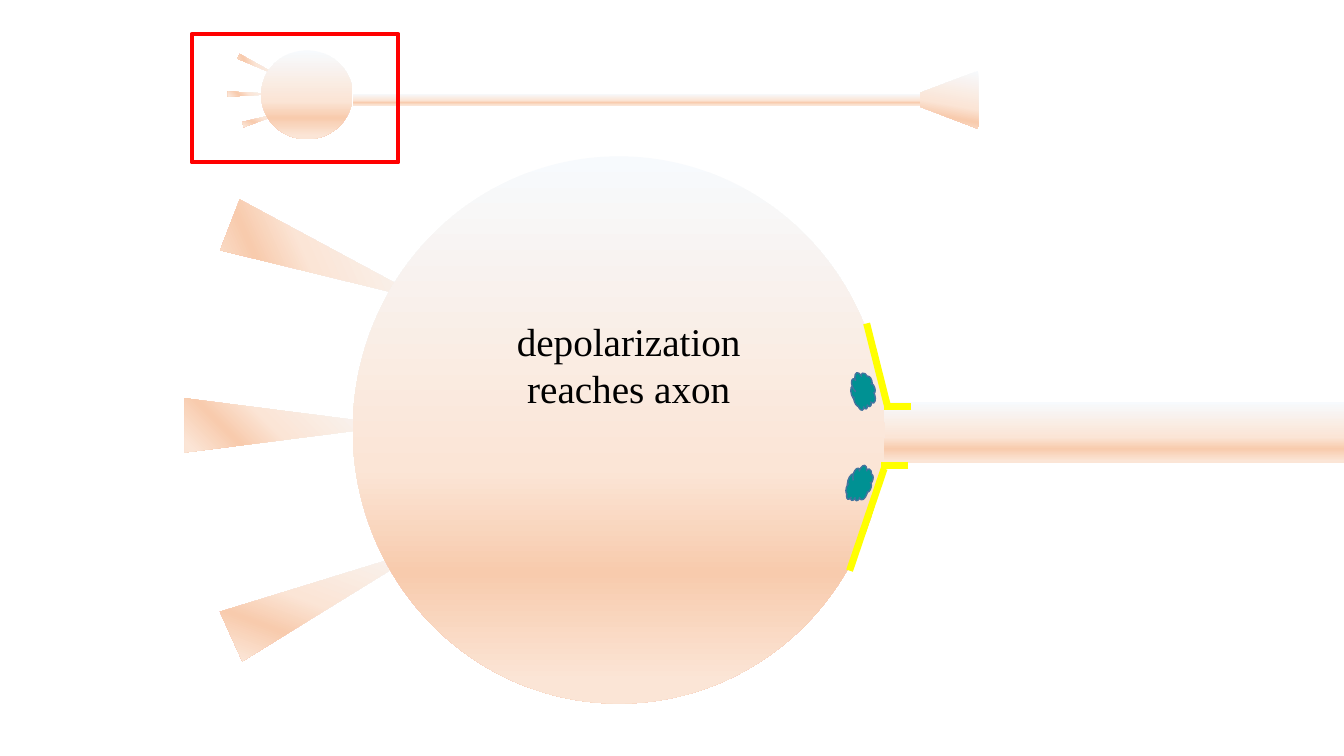
from copy import deepcopy
from typing import NamedTuple

from pptx import Presentation
from pptx.dml import color
from pptx.enum import shapes, text
from pptx.oxml import ns, xmlchemy
from pptx.shapes import autoshape
from pptx.slide import Slide
from pptx.util import Cm, Pt

BLACK = color.RGBColor(0x00, 0x00, 0x00)
RED = color.RGBColor(0xFF, 0x00, 0x00)
YELLOW = color.RGBColor(0xFF, 0xFF, 0x00)
TEAL = color.RGBColor(0x00, 0x91, 0x93)
BLUE = color.RGBColor(0x43, 0x73, 0x9E)
ICE = color.RGBColor(0xF7, 0xFA, 0xFD)
PEACH = color.RGBColor(0xFB, 0xE5, 0xD6)
APRICOT = color.RGBColor(0xF8, 0xCB, 0xAD)
MEMBRANE = [(0, ICE), (0.57, PEACH), (0.76, APRICOT), (0.96, PEACH)]
KIND = shapes.MSO_SHAPE


class Part(NamedTuple):
    kind: shapes.MSO_SHAPE
    left: float
    top: float
    width: float
    height: float
    rotation: float = 0
    gradient_angle: float = 90


class Segment(NamedTuple):
    start_x: float
    start_y: float
    end_x: float
    end_y: float


def dendrite(left: float, top: float, width: float, height: float, rotation: float) -> Part:
    return Part(KIND.ISOSCELES_TRIANGLE, left, top, width, height, rotation, 45)


TERMINAL = Part(KIND.TRAPEZOID, 23.19, 1.78, 1.47, 1.47, 270, 190)
NEURON_PARTS = [
    Part(KIND.RECTANGLE, 21.41, 10.13, 14.33, 1.55),
    dendrite(7.62, 3.94, 1.37, 5.38, 111),
    dendrite(6.65, 8.03, 1.37, 5.38, 90),
    dendrite(7.59, 12.24, 1.37, 5.38, 65.6),
    dendrite(6.5, 1.07, 0.13, 1.24, 116),
    dendrite(6.3, 1.75, 0.13, 1.24, 90),
    dendrite(6.65, 2.34, 0.13, 1.24, 73),
    Part(KIND.OVAL, 6.58, 1.27, 2.31, 2.24),
    Part(KIND.RECTANGLE, 8.89, 2.36, 14.33, 0.3),
    TERMINAL,
    Part(KIND.OVAL, 8.89, 3.94, 13.41, 13.79),
]
ZOOM_FRAME = Part(KIND.RECTANGLE, 4.83, 0.86, 5.21, 3.23)
CHANNELS = [
    Part(KIND.CLOUD, 21.36, 11.71, 0.61, 0.94, 196.6),
    Part(KIND.CLOUD, 21.44, 9.37, 0.61, 0.94, 161.7),
]
HILLOCK = [
    Segment(21.84, 8.15, 22.38, 10.29),
    Segment(21.41, 14.38, 22.28, 11.81),
    Segment(22.89, 11.73, 22.2, 11.73),
    Segment(22.96, 10.24, 22.28, 10.24),
]


def add_part(slide: Slide, part: Part) -> autoshape.Shape:
    shape = slide.shapes.add_shape(
        part.kind, Cm(part.left), Cm(part.top), Cm(part.width), Cm(part.height)
    )
    shape.rotation = part.rotation
    shape.shadow.inherit = False
    return shape


def add_neuron_part(slide: Slide, part: Part) -> None:
    shape = add_part(slide, part)
    shape.line.fill.background()
    if part.kind == KIND.TRAPEZOID:
        shape.adjustments[0] = 0.38
    shape.fill.gradient()
    shape.fill.gradient_angle = 360 - part.gradient_angle
    stop_list = shape.element.spPr.find(".//" + ns.qn("a:gsLst"))
    for _ in range(len(MEMBRANE) - len(stop_list)):
        stop_list.append(deepcopy(stop_list[0]))
    for stop, (position, stop_color) in zip(shape.fill.gradient_stops, MEMBRANE):
        stop.position = position
        stop.color.rgb = stop_color


def add_zoom_frame(slide: Slide) -> None:
    frame = add_part(slide, ZOOM_FRAME)
    frame.fill.background()
    frame.line.color.rgb = RED
    frame.line.width = Pt(3)


def add_channel(slide: Slide, part: Part) -> None:
    channel = add_part(slide, part)
    channel.fill.solid()
    channel.fill.fore_color.rgb = TEAL
    channel.line.color.rgb = BLUE
    channel.line.width = Pt(1)


def add_caption(slide: Slide) -> None:
    caption = slide.shapes.add_textbox(Cm(9.42), Cm(7.87), Cm(12.85), Cm(2.64))
    text_frame = caption.text_frame
    text_frame.word_wrap = True
    text_frame.auto_size = text.MSO_AUTO_SIZE.SHAPE_TO_FIT_TEXT
    text_frame.text = "depolarization\nreaches axon"
    for paragraph in text_frame.paragraphs:
        paragraph.alignment = text.PP_ALIGN.CENTER
        font = paragraph.runs[0].font
        font.name = "Times New Roman"
        font.size = Pt(28)
        font.color.rgb = BLACK


def add_segment(slide: Slide, segment: Segment) -> None:
    connector = slide.shapes.add_connector(
        shapes.MSO_CONNECTOR.STRAIGHT, *(Cm(value) for value in segment)
    )
    connector.line.color.rgb = YELLOW
    connector.line.width = Pt(5)
    connector.element.spPr.append(xmlchemy.OxmlElement("a:effectLst"))


def main() -> None:
    presentation = Presentation()
    presentation.slide_width = Cm(33.87)
    presentation.slide_height = Cm(19.05)
    slide = presentation.slides.add_slide(presentation.slide_layouts[6])
    for part in NEURON_PARTS:
        add_neuron_part(slide, part)
    add_zoom_frame(slide)
    add_caption(slide)
    for channel in CHANNELS:
        add_channel(slide, channel)
    for segment in HILLOCK:
        add_segment(slide, segment)
    presentation.save("out.pptx")


if __name__ == "__main__":
    main()
